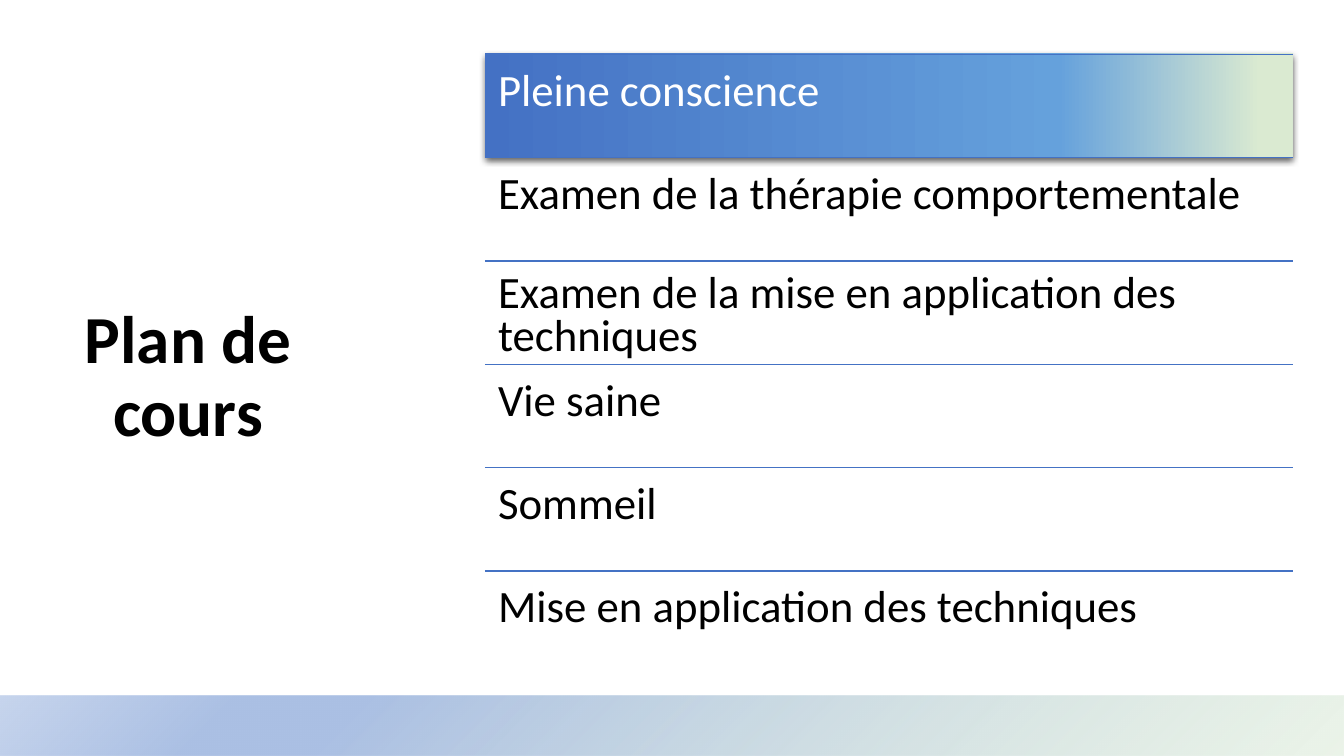
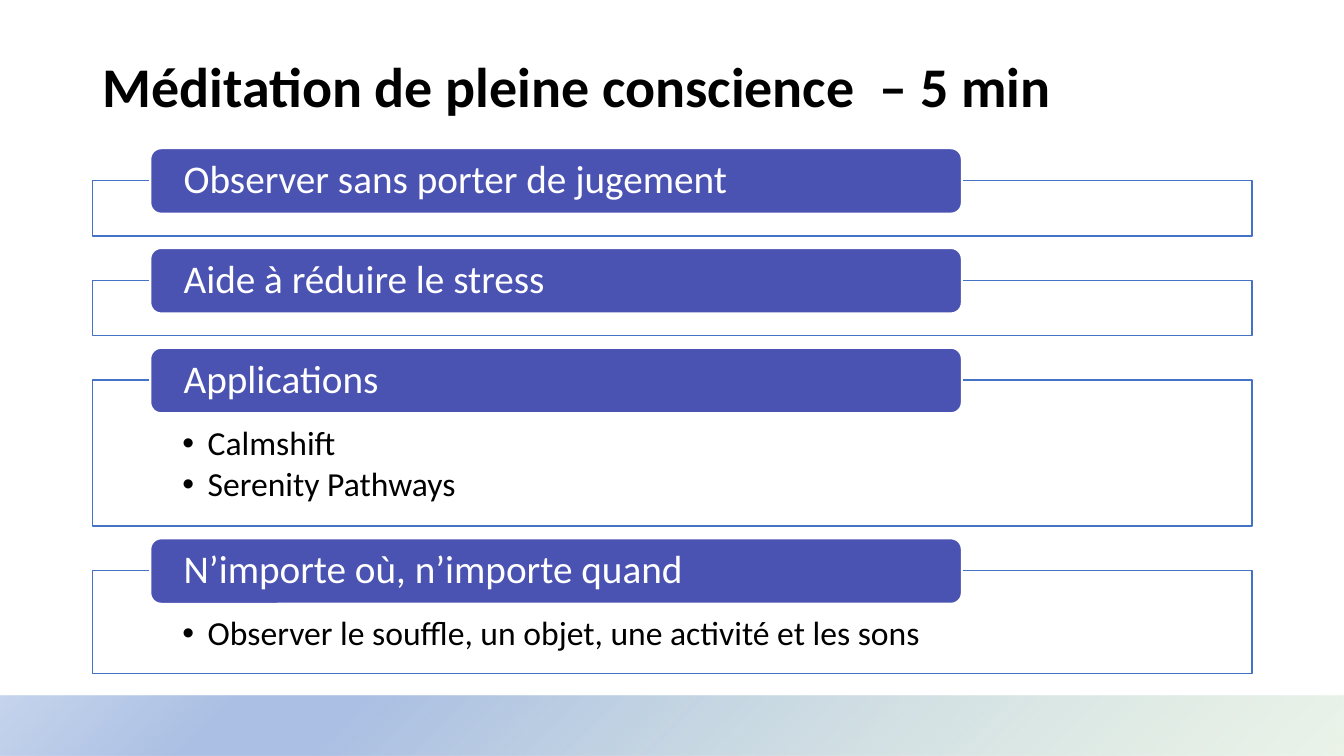
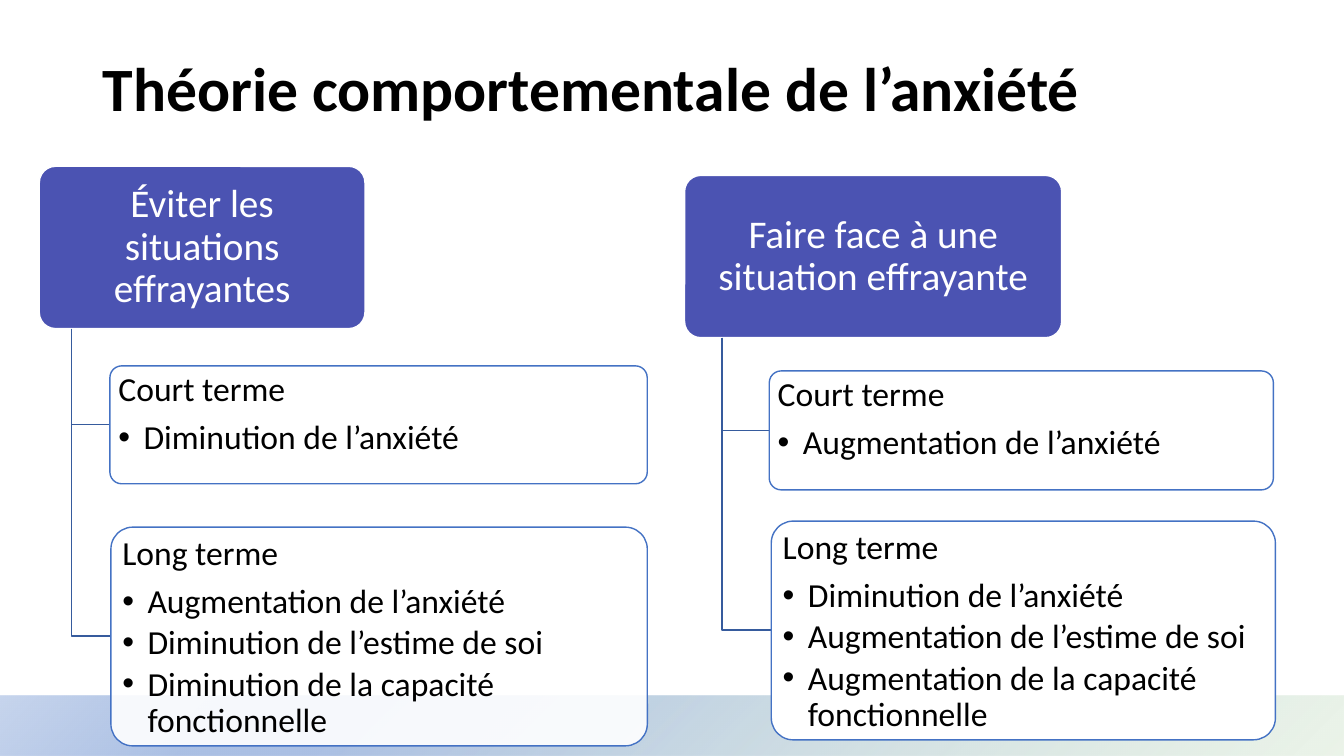
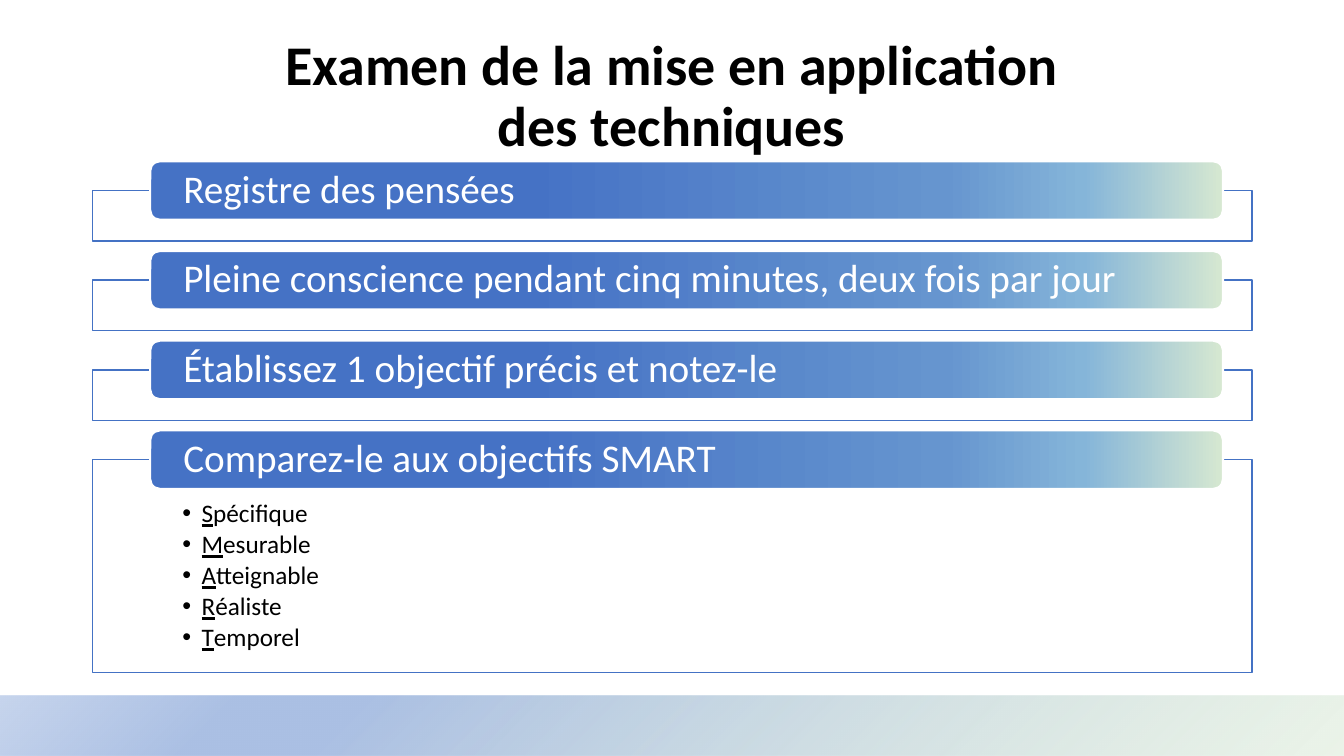
import dataclasses

import lxml.etree
import pptx
import pptx.dml.color
import pptx.enum.shapes
import pptx.enum.text
import pptx.oxml.ns
import pptx.util

EMU_PER_PX = 9144  # 100 px to the inch
SHAPES = pptx.enum.shapes.MSO_SHAPE
ALIGN = pptx.enum.text.PP_ALIGN
ANCHOR = pptx.enum.text.MSO_ANCHOR


@dataclasses.dataclass(frozen=True)
class Theme:
    font: str = "Calibri"
    black: str = "000000"
    white: str = "FFFFFF"
    accent: str = "4472C4"
    indigo: str = "4B53B2"
    branch: str = "365B9D"
    # Gradient stops: position %, colour, opacity %
    footer: tuple = ((0, "D6E8D1", 47), (74, "ABC0E4", 100),
                     (83, "ABC0E4", 100), (100, "C7D5ED", 100))
    highlight: tuple = ((0, "4471C4", 100), (71, "65A1DC", 100),
                        (96, "DAEAD1", 100))
    bar: tuple = ((35, "4572C5", 100), (74, "6695CF", 100),
                  (87, "85B5D9", 100), (100, "D6E8D1", 100))
    outline_title: int = 48
    large_title: int = 44
    title: int = 40
    row: int = 32
    heading: int = 28
    body: int = 24
    small: int = 18
    line_spacing: float = 0.9
    heading_gap: float = 0.35  # space after, as a share of the type size
    bullet_gap: float = 0.15


THEME = Theme()


@dataclasses.dataclass(frozen=True)
class StackStyle:
    bar_width: int
    bar_height: int
    bar_fill: object
    gap: int
    body_top: int
    bullet_size: int
    bullet_indent: int
    underline_initial: bool = False


@dataclasses.dataclass(frozen=True)
class Branch:
    box: tuple  # relative to the top left of the tree
    heading: str
    effects: tuple
    opacity: int = 90


def px(length):
    return pptx.util.Emu(round(length * EMU_PER_PX))


def rgb(colour):
    return pptx.dml.color.RGBColor.from_string(colour)


def sub(parent, tag, **attributes):
    return lxml.etree.SubElement(parent, pptx.oxml.ns.qn(tag), attributes)


def set_opacity(colour_element, percent):
    if percent < 100:
        sub(colour_element, "a:alpha", val=str(percent * 1000))


def fill_gradient(shape, stops, radial=False):
    """Run the stops left to right, or outwards from the bottom right corner."""
    shape.fill.gradient()
    gradient = shape.element.spPr.find(pptx.oxml.ns.qn("a:gradFill"))
    gradient.clear()
    gradient.set("rotWithShape", "1")
    stop_list = sub(gradient, "a:gsLst")
    for position, colour, opacity in stops:
        stop = sub(stop_list, "a:gs", pos=str(position * 1000))
        set_opacity(sub(stop, "a:srgbClr", val=colour), opacity)
    if radial:
        circle = sub(gradient, "a:path", path="circle")
        sub(circle, "a:fillToRect", l="100000", t="100000")
    else:
        sub(gradient, "a:lin", ang="0", scaled="0")


def add_box(slide, box, fill, line=None, line_width=1, kind=SHAPES.RECTANGLE,
            opacity=100):
    """Add a preset shape; fill is one colour or a tuple of gradient stops."""
    shape = slide.shapes.add_shape(kind, *map(px, box))
    shape.shadow.inherit = False
    if isinstance(fill, tuple):
        fill_gradient(shape, fill)
    else:
        shape.fill.solid()
        shape.fill.fore_color.rgb = rgb(fill)
        set_opacity(shape.element.spPr.find(".//" + pptx.oxml.ns.qn("a:srgbClr")),
                    opacity)
    if line:
        shape.line.color.rgb = rgb(line)
        shape.line.width = pptx.util.Pt(line_width)
    else:
        shape.line.fill.background()
    return shape


def prepare_frame(shape, margins=(10, 5, 10, 5), anchor=ANCHOR.TOP):
    frame = shape.text_frame
    frame.word_wrap = True
    frame.vertical_anchor = anchor
    (frame.margin_left, frame.margin_top,
     frame.margin_right, frame.margin_bottom) = map(px, margins)
    return frame


def write(paragraph, text, size, colour=THEME.black, bold=False,
          align=ALIGN.LEFT, spacing=THEME.line_spacing, gap=0, bullet_indent=0,
          underline_initial=False):
    if bullet_indent:
        properties = paragraph._p.get_or_add_pPr()
        properties.set("marL", str(px(bullet_indent)))
        properties.set("indent", str(-px(bullet_indent)))
        sub(sub(properties, "a:buClr"), "a:srgbClr", val=colour)
        sub(properties, "a:buFont", typeface="Arial")
        sub(properties, "a:buChar", char="•")
    if underline_initial:
        initial = paragraph.add_run()
        initial.text = text[0]
        initial.font.underline = True
        text = text[1:]
    paragraph.add_run().text = text
    paragraph.alignment = align
    paragraph.line_spacing = spacing
    if gap:
        paragraph.space_after = pptx.util.Pt(round(size * gap, 1))
    font = paragraph.font
    font.name, font.size, font.bold = THEME.font, pptx.util.Pt(size), bold
    font.color.rgb = rgb(colour)


def write_bullets(frame, items, size, indent, underline_initial=False,
                  after_heading=False):
    for index, item in enumerate(items):
        fresh = index > 0 or after_heading
        paragraph = frame.add_paragraph() if fresh else frame.paragraphs[0]
        write(paragraph, item, size, gap=THEME.bullet_gap, bullet_indent=indent,
              underline_initial=underline_initial)


def add_title(slide, box, text, size, align=ALIGN.LEFT):
    title = slide.shapes.add_textbox(*map(px, box))
    frame = prepare_frame(title, anchor=ANCHOR.MIDDLE)
    write(frame.paragraphs[0], text, size, bold=True, align=align)


def move_footer_to_layout(slide):
    """Draw the footer band and hand it to the layout that all slides share."""
    band = add_box(slide, (0, 690, 1333, 60), THEME.white)
    fill_gradient(band, THEME.footer, radial=True)
    band.element.nvSpPr.cNvPr.set("id", "100")
    slide.slide_layout.shapes.element.append(band.element)


def add_rule(slide, left, top, width):
    rule = slide.shapes.add_connector(
        pptx.enum.shapes.MSO_CONNECTOR.STRAIGHT,
        px(left), px(top), px(left + width), px(top))
    rule.line.color.rgb = rgb(THEME.accent)
    rule.line.width = pptx.util.Pt(1)
    sub(rule.element.spPr, "a:effectLst")


def add_outline(slide, box, topics, current=0):
    """Ruled rows of (text, line spacing), with the current one highlighted."""
    left, top, width, height = box
    row_height = height / len(topics)
    highlight = add_box(slide, (left, top + current * row_height - 1, width, 104),
                        THEME.highlight)
    effects = highlight.element.spPr.find(pptx.oxml.ns.qn("a:effectLst"))
    shadow = sub(effects, "a:outerShdw", blurRad=str(pptx.util.Pt(4.5)),
                 dist=str(pptx.util.Pt(1.5)), dir="5400000", algn="t",
                 rotWithShape="0")
    set_opacity(sub(shadow, "a:srgbClr", val=THEME.black), 63)
    for index, (topic, spacing) in enumerate(topics):
        row_top = top + index * row_height
        add_rule(slide, left, row_top, width)
        row = slide.shapes.add_textbox(
            *map(px, (left, row_top, width, row_height)))
        frame = prepare_frame(row, (13, 13, 13, 13))
        write(frame.paragraphs[0], topic, THEME.row, spacing=spacing,
              colour=THEME.white if index == current else THEME.black)


def add_section_stack(slide, left, top, width, sections, style):
    """Stack frames of (heading, bullets, height), a bar on each top edge."""
    for heading, bullets, height in sections:
        body = add_box(slide, (left, top, width, height), THEME.white,
                       THEME.accent, opacity=90)
        if bullets:
            frame = prepare_frame(body, (89, style.body_top, 89, 14))
            write_bullets(frame, bullets, style.bullet_size,
                          style.bullet_indent, style.underline_initial)
        bar = add_box(slide, (left + 57, top - style.bar_height // 2,
                              style.bar_width, style.bar_height),
                      style.bar_fill, THEME.white, 1.5, SHAPES.ROUNDED_RECTANGLE)
        frame = prepare_frame(bar, (30, 0, 30, 0), ANCHOR.MIDDLE)
        write(frame.paragraphs[0], heading, THEME.heading, THEME.white)
        top += height + style.gap


def add_elbow(slide, start, end):
    """Draw a line down from start, then across to end."""
    builder = slide.shapes.build_freeform(*map(px, start))
    corner = (start[0], end[1])
    builder.add_line_segments(
        [tuple(map(px, point)) for point in (corner, end)], close=False)
    elbow = builder.convert_to_shape()
    elbow.shadow.inherit = False
    elbow.fill.background()
    elbow.line.color.rgb = rgb(THEME.branch)
    elbow.line.width = pptx.util.Pt(1)


def add_tree(slide, box, situation, branches):
    """Box a situation and hang its branches from a trunk below it."""
    left, top, width, height = box
    root = add_box(slide, box, THEME.indigo, THEME.white,
                   kind=SHAPES.ROUNDED_RECTANGLE)
    root.adjustments[0] = 0.1
    frame = prepare_frame(root, (6, 4, 6, 4), ANCHOR.MIDDLE)
    write(frame.paragraphs[0], situation, THEME.heading, THEME.white,
          align=ALIGN.CENTER)
    for branch in branches:
        x, y, branch_width, branch_height = branch.box
        x, y = left + x, top + y
        add_elbow(slide, (left + width // 10, top + height),
                  (x, y + branch_height // 2))
        leaf = add_box(slide, (x, y, branch_width, branch_height), THEME.white,
                       THEME.accent, kind=SHAPES.ROUNDED_RECTANGLE,
                       opacity=branch.opacity)
        leaf.adjustments[0] = 0.1
        frame = prepare_frame(leaf, (5, 3, 5, 3))
        write(frame.paragraphs[0], branch.heading, THEME.body,
              gap=THEME.heading_gap)
        write_bullets(frame, branch.effects, THEME.body, 25, after_heading=True)


def build_outline_slide(slide):
    add_title(slide, (61, 303, 251, 145), "Plan de cours", THEME.outline_title,
              ALIGN.CENTER)
    add_outline(slide, (481, 54, 801, 615), [
        ("Pleine conscience", 0.9),
        ("Examen de la thérapie comportementale", 0.9),
        ("Examen de la mise en application des techniques", 0.8),
        ("Vie saine", 0.9),
        ("Sommeil", 0.9),
        ("Mise en application des techniques", 0.9),
    ])


def build_meditation_slide(slide):
    add_title(slide, (92, 40, 1150, 98),
              "Méditation de pleine conscience  – 5 min", THEME.title)
    style = StackStyle(bar_width=805, bar_height=65, bar_fill=THEME.indigo,
                       gap=44, body_top=46, bullet_size=THEME.body,
                       bullet_indent=25)
    add_section_stack(slide, 92, 179, 1150, [
        ("Observer sans porter de jugement", (), 55),
        ("Aide à réduire le stress", (), 55),
        ("Applications", ("Calmshift", "Serenity Pathways"), 145),
        ("N’importe où, n’importe quand",
         ("Observer le souffle, un objet, une activité et les sons",), 102),
    ], style)


def build_theory_slide(slide):
    add_tree(slide, (39, 165, 323, 161), "Éviter les situations effrayantes", [
        Branch((70, 198, 533, 117), "Court terme", ("Diminution de l’anxiété",)),
        Branch((71, 358, 532, 217), "Long terme",
               ("Augmentation de l’anxiété", "Diminution de l’estime de soi",
                "Diminution de la capacité fonctionnelle")),
    ])
    add_tree(slide, (679, 174, 374, 161), "Faire face à une situation effrayante", [
        Branch((84, 194, 500, 118), "Court terme",
               ("Augmentation de l’anxiété",)),
        Branch((86, 343, 500, 217), "Long terme",
               ("Diminution de l’anxiété", "Augmentation de l’estime de soi",
                "Augmentation de la capacité fonctionnelle"), opacity=100),
    ])
    add_title(slide, (92, 18, 1150, 145),
              "Théorie comportementale de l’anxiété", THEME.large_title)


def build_practice_slide(slide):
    add_title(slide, (259, 42, 814, 110),
              "Examen de la mise en application des techniques", THEME.title,
              ALIGN.CENTER)
    style = StackStyle(bar_width=1064, bar_height=58, bar_fill=THEME.bar,
                       gap=39, body_top=41, bullet_size=THEME.small,
                       bullet_indent=19, underline_initial=True)
    add_section_stack(slide, 92, 189, 1150, [
        ("Registre des pensées", (), 50),
        ("Pleine conscience pendant cinq minutes, deux fois par jour", (), 50),
        ("Établissez 1 objectif précis et notez-le", (), 50),
        ("Comparez-le aux objectifs SMART",
         ("Spécifique", "Mesurable", "Atteignable", "Réaliste", "Temporel"), 211),
    ], style)


def main():
    deck = pptx.Presentation()
    deck.slide_width, deck.slide_height = px(1333), px(750)
    blank = deck.slide_layouts[6]
    builders = (build_outline_slide, build_meditation_slide,
                build_theory_slide, build_practice_slide)
    for number, build in enumerate(builders):
        slide = deck.slides.add_slide(blank)
        if number == 0:
            move_footer_to_layout(slide)
        build(slide)
    deck.save("out.pptx")


if __name__ == "__main__":
    main()
